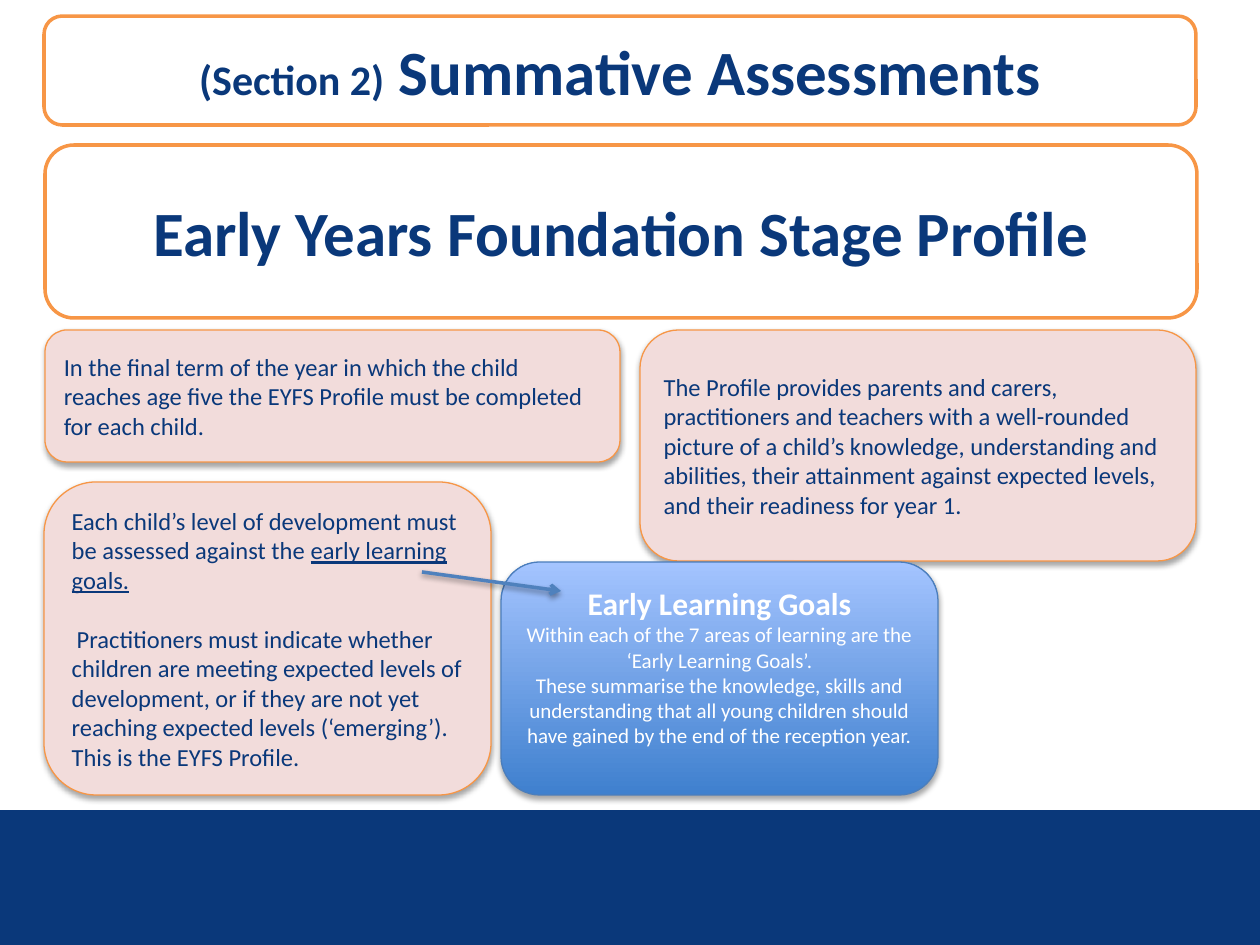
import pptx
import pptx.util
import pptx.dml.color
import pptx.enum.shapes
import pptx.enum.text
import pptx.oxml
import pptx.oxml.ns

SCALE = 914400 / 126
NAVY, WHITE, ORANGE, PINK = "0A387A", "FFFFFF", "F79646", "F2DCDB"
SHAPES = pptx.enum.shapes.MSO_SHAPE
ALIGN = pptx.enum.text.PP_ALIGN


def px(num):
    return pptx.util.Emu(round(num * SCALE))


def rgb(code):
    return pptx.dml.color.RGBColor.from_string(code)


def shade(shape, alpha, dist):
    """Give the shape a soft shadow straight below it."""
    props = shape._element.spPr
    old = props.find(pptx.oxml.ns.qn("a:effectLst"))
    if old is not None:
        props.remove(old)
    props.append(pptx.oxml.parse_xml(
        f'<a:effectLst {pptx.oxml.ns.nsdecls("a")}>'
        f'<a:outerShdw blurRad="40000" dist="{dist}" dir="5400000" rotWithShape="0">'
        f'<a:srgbClr val="000000"><a:alpha val="{alpha}000"/></a:srgbClr>'
        '</a:outerShdw></a:effectLst>'))


def panel(slide, box, fill, edge, width):
    shape = slide.shapes.add_shape(SHAPES.ROUNDED_RECTANGLE, *map(px, box))
    shape.shadow.inherit = False
    shape.fill.solid()
    shape.fill.fore_color.rgb = rgb(fill)
    shape.line.color.rgb = rgb(edge)
    shape.line.width = pptx.util.Pt(width)
    frame = shape.text_frame
    frame.word_wrap = True
    frame.vertical_anchor = pptx.enum.text.MSO_ANCHOR.MIDDLE
    return shape


def write(shape, paras, align, color):
    """Fill the shape with paragraphs, each a list of (text, size, style) runs."""
    frame = shape.text_frame
    for num, runs in enumerate(paras):
        para = frame.add_paragraph() if num else frame.paragraphs[0]
        para.alignment = align
        for text, size, style in runs:
            run = para.add_run()
            run.text = text
            font = run.font
            font.name = "Calibri"
            font.size = pptx.util.Pt(size)
            font.color.rgb = rgb(color)
            font.bold = style == "bold"
            font.underline = style == "under"


def banner(slide, box, runs):
    shape = panel(slide, box, WHITE, ORANGE, 2)
    write(shape, [runs], ALIGN.CENTER, NAVY)


def note(slide, box, paras):
    shape = panel(slide, box, PINK, ORANGE, 0.75)
    shade(shape, 35, 23000)
    write(shape, paras, ALIGN.LEFT, NAVY)
    for para in shape.text_frame.paragraphs[1:]:
        para.space_before = pptx.util.Pt(17)
        para._p.get_or_add_pPr().set("indent", str(px(5)))


def goals(slide, box, paras):
    shape = panel(slide, box, WHITE, "4B7EBC", 0.75)
    shade(shape, 35, 23000)
    shape.fill.gradient()
    shape.fill.gradient_angle = 90
    for stop, code in zip(shape.fill.gradient_stops, ("3F80CE", "A4C4FF")):
        stop.color.rgb = rgb(code)
    shape.text_frame.margin_bottom = px(31)
    write(shape, paras, ALIGN.CENTER, WHITE)


def arrow(slide, start, end):
    link = slide.shapes.add_connector(
        pptx.enum.shapes.MSO_CONNECTOR.STRAIGHT, *map(px, start + end))
    link.line.color.rgb = rgb("4F81BD")
    link.line.width = pptx.util.Pt(2)
    link.line._get_or_add_ln().append(pptx.oxml.parse_xml(
        f'<a:tailEnd {pptx.oxml.ns.nsdecls("a")} type="arrow"/>'))
    shade(link, 38, 20000)


def footer(slide, box):
    bar = slide.shapes.add_shape(SHAPES.RECTANGLE, *map(px, box))
    bar.shadow.inherit = False
    bar.fill.solid()
    bar.fill.fore_color.rgb = rgb(NAVY)
    bar.line.fill.background()


def main():
    deck = pptx.Presentation()
    deck.slide_width, deck.slide_height = px(1260), px(945)
    slide = deck.slides.add_slide(deck.slide_layouts[6])

    footer(slide, (0, 810, 1260, 135))
    banner(slide, (45, 145, 1152, 173),
           [("Early Years Foundation Stage Profile", 36, "bold")])
    banner(slide, (44, 16, 1152, 109),
           [("(Section 2)", 24, "bold"),
            (" Summative Assessments", 36, "bold")])
    note(slide, (45, 330, 575, 132), [[
        ("In the final term of the year in which the child reaches age five "
         "the EYFS Profile must be completed for each child.", 14, "")]])
    note(slide, (640, 330, 556, 231), [[
        ("The Profile provides parents and carers, practitioners and teachers "
         "with a well-rounded picture of a child’s knowledge, understanding "
         "and abilities, their attainment against expected levels, and their "
         "readiness for year 1.", 14, "")]])
    note(slide, (44, 482, 447, 313), [
        [("Each child’s level of development must be assessed against the ", 14, ""),
         ("early learning goals.", 14, "under")],
        [("Practitioners must indicate whether children are meeting expected "
          "levels of development, or if they are not yet reaching expected "
          "levels (‘emerging’). This is the EYFS Profile.", 14, "")]])
    goals(slide, (501, 562, 437, 233), [
        [("Early Learning Goals", 18, "bold")],
        [("Within each of the 7 areas of learning are the "
          "‘Early Learning Goals’.", 12, "")],
        [("These summarise the knowledge, skills and understanding that all "
          "young children should have gained by the end of the reception "
          "year.", 12, "")]])
    arrow(slide, (422, 572), (561, 591))

    deck.save("out.pptx")


if __name__ == "__main__":
    main()
